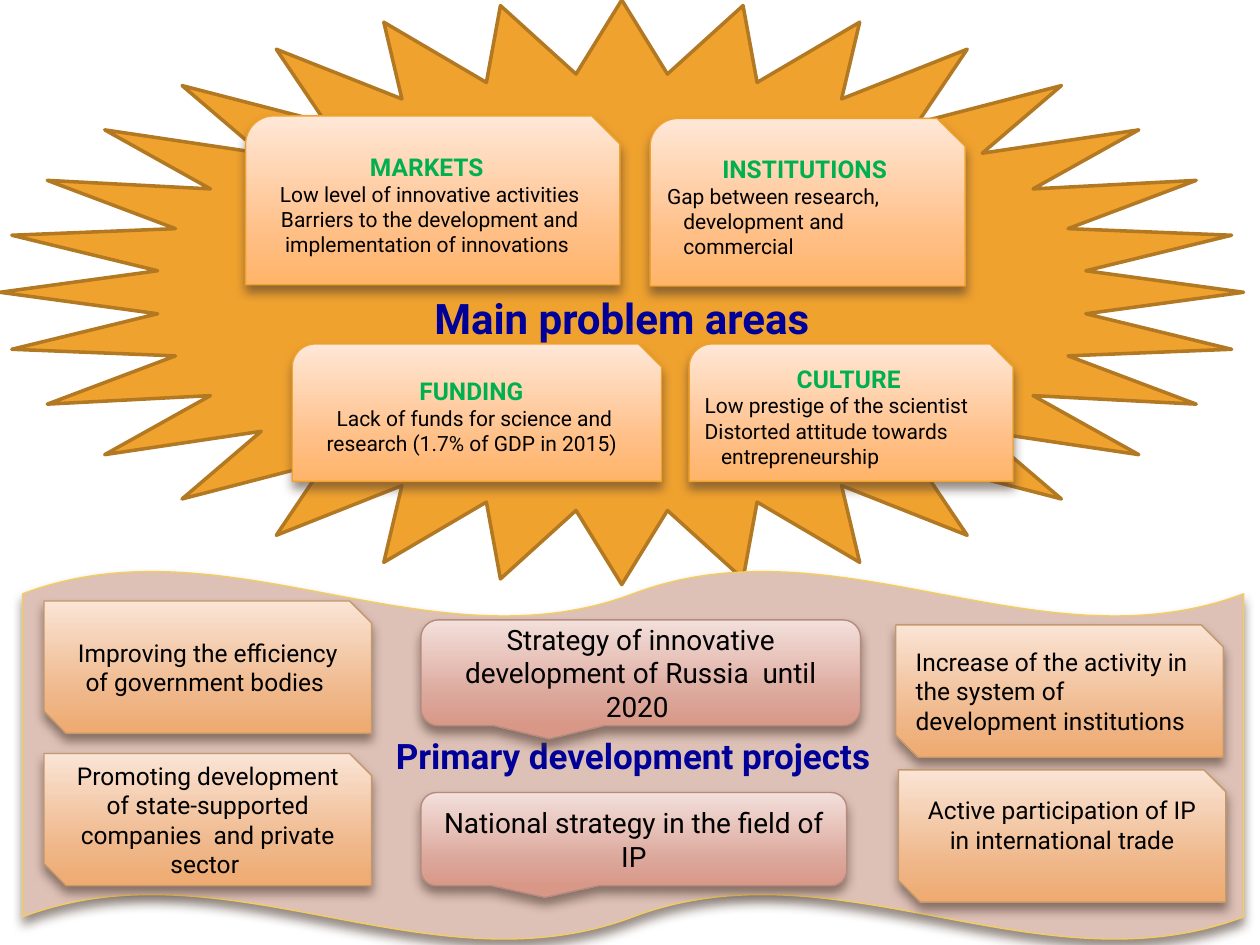
from copy import deepcopy

from lxml import etree
from pptx import Presentation
from pptx.dml.color import RGBColor
from pptx.enum.shapes import MSO_SHAPE
from pptx.enum.text import MSO_ANCHOR, PP_ALIGN
from pptx.oxml.ns import qn
from pptx.util import Inches, Pt

STAR = MSO_SHAPE.STAR_32_POINT
WAVE = MSO_SHAPE.DOUBLE_WAVE
AREA = MSO_SHAPE.SNIP_ROUND_RECTANGLE
PROJECT = MSO_SHAPE.SNIP_2_DIAG_RECTANGLE
STRATEGY = MSO_SHAPE.ROUNDED_RECTANGULAR_CALLOUT
CENTER, LEFT = PP_ALIGN.CENTER, PP_ALIGN.LEFT

THEME = {
    "font": "Roboto",
    "shadow": "4E3B30",
    "thin": 0.79,
    # fill: one colour, or the three colours of a vertical gradient
    "shapes": {
        STAR: {"fill": ["F0A22E"], "line": "B27822"},
        WAVE: {"fill": ["DDC0B6"], "line": "F3CD60"},
        AREA: {"fill": ["FFE7D7", "FFBE84", "FFB468"], "line": "F0A22E"},
        PROJECT: {"fill": ["FAE4D5", "EFB688", "EFAA6F"], "line": "C3986D"},
        STRATEGY: {"fill": ["F3E0DB", "DCA79B", "D89787"], "line": "B58B80"},
    },
    "stops": [0, 0.72, 1],
    # size, colour, bold
    "text": {
        "main": (24, "000099", True),
        "section": (20, "000099", True),
        "heading": (14, "00B050", True),
        "detail": (12, "000000", False),
        "project": (14, "000000", False),
        "strategy": (16, "000000", False),
    },
}

HANGING = 0.13
MARGIN_X, MARGIN_Y = 0.07, 0.04

# place (left, top, width, height), heading, details as (text, alignment, hanging indent)
AREAS = [
    ((1.95, 0.92, 2.97, 1.34), "MARKETS ", [
        ("Low level of innovative activities", CENTER, 0),
        ("Barriers to the development and implementation of innovations ", CENTER, 0)]),
    ((2.32, 2.73, 2.93, 1.09), "FUNDING ", [
        ("Lack of funds for science and research (1.7% of GDP in 2015) ", CENTER, 0)]),
    ((5.16, 0.94, 2.5, 1.33), "INSTITUTIONS", [
        ("Gap between research, development and commercial", LEFT, HANGING)]),
    ((5.47, 2.73, 2.57, 1.09), "CULTURE", [
        ("Low prestige of the scientist", LEFT, 0),
        ("Distorted attitude towards entrepreneurship", LEFT, HANGING)]),
]

PROJECT_SIZE = (2.6, 1.05)
# left and top, text, alignment, extra bottom margin
PROJECTS = [
    ((0.35, 4.77), "Improving the efficiency of government bodies ", CENTER, 0),
    ((0.35, 5.98), "Promoting development of state-supported companies  and private sector ",
     CENTER, 0),
    ((7.11, 4.96), "Increase of the activity in the system of development institutions", LEFT, 0),
    ((7.13, 6.11), "Active participation of IP in international trade", CENTER, 0.18),
]

STRATEGIES = [
    ((3.34, 4.92, 3.49, 0.84), "Strategy of innovative development of Russia  until 2020 "),
    ((3.34, 6.29, 3.38, 0.74), "National strategy in the field of IP"),
]


def paint(fill, colors):
    if len(colors) == 1:
        fill.solid()
        fill.fore_color.rgb = RGBColor.from_string(colors[0])
        return
    fill.gradient()
    fill.gradient_angle = 270


def add_middle_stop(shape):
    first = shape._element.spPr.find(".//" + qn("a:gs"))
    first.addnext(deepcopy(first))


def add_shadow(shape):
    effects = shape._element.spPr.find(qn("a:effectLst"))
    outer = etree.SubElement(effects, qn("a:outerShdw"), blurRad=str(Pt(6)), dist=str(Pt(4)),
                             dir="5400000", rotWithShape="0")
    color = etree.SubElement(outer, qn("a:srgbClr"), val=THEME["shadow"])
    etree.SubElement(color, qn("a:alpha"), val="60000")


def add_box(page, kind, place, paragraphs, extra_top=0, extra_bottom=0):
    """Add a styled shape; paragraphs are (text, text style, alignment, hanging indent)."""
    look = THEME["shapes"][kind]
    box = page.shapes.add_shape(kind, *map(Inches, place))
    paint(box.fill, look["fill"])
    if len(look["fill"]) > 1:
        add_middle_stop(box)
        for stop, position, color in zip(box.fill.gradient_stops, THEME["stops"], look["fill"]):
            stop.position = position
            stop.color.rgb = RGBColor.from_string(color)
    box.line.color.rgb = RGBColor.from_string(look["line"])
    box.line.width = Pt(2 if kind == STAR else THEME["thin"])
    box.shadow.inherit = False
    if kind != STAR:
        add_shadow(box)

    frame = box.text_frame
    frame.word_wrap = True
    frame.vertical_anchor = MSO_ANCHOR.MIDDLE
    frame.margin_left = frame.margin_right = Inches(MARGIN_X)
    frame.margin_top = Inches(MARGIN_Y + extra_top)
    frame.margin_bottom = Inches(MARGIN_Y + extra_bottom)
    frame.text = "\n".join(text for text, *_ in paragraphs)
    for para, (_, style, alignment, hanging) in zip(frame.paragraphs, paragraphs):
        para.alignment = alignment
        if hanging:
            properties = para._p.get_or_add_pPr()
            properties.set("marL", str(Inches(hanging)))
            properties.set("indent", str(-Inches(hanging)))
        size, color, bold = THEME["text"][style]
        for span in para.runs:
            span.font.name = THEME["font"]
            span.font.size = Pt(size)
            span.font.bold = bold
            span.font.color.rgb = RGBColor.from_string(color)


def main():
    deck = Presentation()
    deck.slide_width, deck.slide_height = Inches(10), Inches(7.5)
    page = deck.slides.add_slide(deck.slide_layouts[6])

    add_box(page, STAR, (0, 0, 9.87, 4.64),
            [("Main problem areas", "main", CENTER, 0)], extra_top=0.4)
    for place, heading, details in AREAS:
        lines = [(text, "detail", alignment, hanging) for text, alignment, hanging in details]
        add_box(page, AREA, place, [(heading, "heading", CENTER, 0)] + lines)

    add_box(page, WAVE, (0.18, 4.53, 9.69, 2.93),
            [("Primary development projects", "section", CENTER, 0)])
    for corner, text, alignment, extra in PROJECTS:
        add_box(page, PROJECT, corner + PROJECT_SIZE,
                [(text, "project", alignment, 0)], extra_bottom=extra)
    for place, text in STRATEGIES:
        add_box(page, STRATEGY, place, [(text, "strategy", CENTER, 0)])

    deck.save("out.pptx")


if __name__ == "__main__":
    main()
